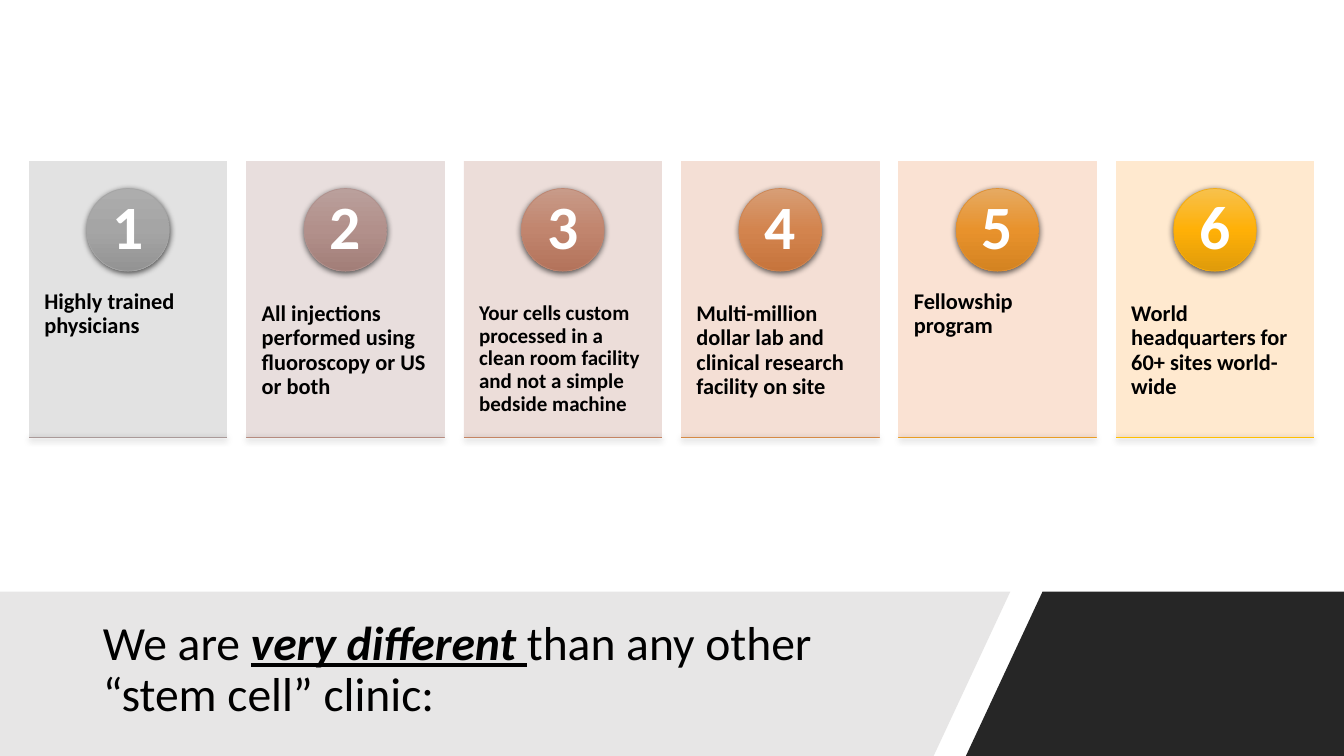
"""Build the slide of six numbered reasons why the clinic is different."""
from colorsys import hls_to_rgb

from lxml import etree
from pptx import Presentation
from pptx.dml.color import RGBColor
from pptx.enum.shapes import MSO_SHAPE
from pptx.enum.text import MSO_ANCHOR, MSO_AUTO_SIZE, PP_ALIGN
from pptx.oxml import parse_xml
from pptx.oxml.ns import nsdecls
from pptx.util import Inches, Pt

RECT, OVAL = MSO_SHAPE.RECTANGLE, MSO_SHAPE.OVAL
TOP, MIDDLE = MSO_ANCHOR.TOP, MSO_ANCHOR.MIDDLE
LEFT, CENTER = PP_ALIGN.LEFT, PP_ALIGN.CENTER
NO_FIT = MSO_AUTO_SIZE.NONE

THEME = {
    "font": "Calibri", "ink": "000000", "number": "FFFFFF",
    "band": "E7E6E6", "corner": "262626",
    "title_pt": 34, "number_pt": 44, "line_pt": 0.5,
}
REASONS = [
    ("Highly trained physicians", 16, "E2E2E2"),
    ("All injections performed using fluoroscopy or US or both", 16, "E8DEDD"),
    ("Your cells custom processed in a clean room facility and not a simple "
     "bedside machine", 15, "ECDDD9"),
    ("Multi-million dollar lab and clinical research facility on site", 16, "F4DFD5"),
    ("Fellowship program", 16, "FAE2D3"),
    ("World headquarters for 60+ sites world-wide", 16, "FFE9CF"),
]
TITLE = [("We are ", False), ("very different ", True),
         ("than any other “stem cell” clinic:", False)]

W, H = 13.33, 7.5
BAND_Y = 5.87
CARD_X, CARD_Y, CARD_W, CARD_H = 0.29, 1.6, 1.96, 2.74
PITCH = (11.07 - CARD_X) / (len(REASONS) - 1)
DISC, DISC_Y = 0.82, 1.87
NUM = 0.58
LAST_STEP = 2 * len(REASONS) - 1


def add_glossy(s, kind, box, step):
    """Add a shaded shape whose colour runs from grey to amber by step."""
    t = step / LAST_STEP
    shades = [(0, 0.68 - 0.05 * t, t), (50, 0.647 - 0.147 * t, min(1, 1.1 * t)),
              (100, 0.576 - 0.13 * t, t)]
    stops = ""
    for pos, light, sat in shades:
        rgb = RGBColor(*(round(255 * v) for v in hls_to_rgb(t / 8, light, sat)))
        stops += f'<a:gs pos="{pos * 1000}"><a:srgbClr val="{rgb}"/></a:gs>'
    sp = s.shapes.add_shape(kind, *map(Inches, box))
    line = hls_to_rgb(t / 8, 0.647 - 0.147 * t, t)
    sp.line.color.rgb = RGBColor(*(round(255 * v) for v in line))
    sp.line.width = Pt(THEME["line_pt"])
    ln = sp.line._ln
    ln.addprevious(parse_xml(
        f'<a:gradFill {nsdecls("a")} rotWithShape="1"><a:gsLst>{stops}</a:gsLst>'
        '<a:lin ang="5400000" scaled="0"/></a:gradFill>'))
    ln.addnext(etree.fromstring(
        f'<a:effectLst {nsdecls("a")}><a:outerShdw blurRad="57150" dist="19050" '
        'dir="5400000" algn="ctr" rotWithShape="0"><a:srgbClr val="000000">'
        '<a:alpha val="63000"/></a:srgbClr></a:outerShdw></a:effectLst>'))


def add_label(s, text, box, insets, size, color, align, anchor):
    """Add a wrapped bold text box."""
    tf = s.shapes.add_textbox(*map(Inches, box)).text_frame
    tf.word_wrap, tf.vertical_anchor = True, anchor
    tf.margin_left = tf.margin_right = Inches(insets[0])
    tf.margin_top = tf.margin_bottom = Inches(insets[1])
    tf.text = text
    p = tf.paragraphs[0]
    p.alignment, p.line_spacing = align, 0.9
    font = p.runs[0].font
    font.name, font.size, font.bold = THEME["font"], Pt(size), True
    font.color.rgb = RGBColor.from_string(color)


prs = Presentation()
prs.slide_width, prs.slide_height = Inches(W), Inches(H)
s = prs.slides.add_slide(prs.slide_layouts[5])

BANDS = [
    ("corner", [(10.34, BAND_Y), (W, BAND_Y), (W, H), (9.58, H)]),
    ("band", [(0, BAND_Y), (10.02, BAND_Y), (9.26, H), (0, H)]),
]
for color, points in BANDS:
    start, *rest = [(Inches(x), Inches(y)) for x, y in points]
    builder = s.shapes.build_freeform(*start)
    builder.add_line_segments(rest, close=True)
    sp = builder.convert_to_shape()
    sp.shadow.inherit = False
    sp.fill.solid()
    sp.fill.fore_color.rgb = RGBColor.from_string(THEME[color])
    sp.line.fill.background()

title = s.shapes.title
title.element.getparent().append(title.element)
title.left, title.top, title.width, title.height = map(Inches, (0.92, 6.05, 8.44, 1.2))
tf = title.text_frame
tf.word_wrap, tf.auto_size, tf.vertical_anchor = True, NO_FIT, MIDDLE
p = tf.paragraphs[0]
p.alignment, p.line_spacing = LEFT, 0.9
for text, strong in TITLE:
    r = p.add_run()
    r.text = text
    r.font.name, r.font.size = THEME["font"], Pt(THEME["title_pt"])
    r.font.bold = r.font.italic = r.font.underline = strong
    r.font.color.rgb = RGBColor.from_string(THEME["ink"])

for i, (text, size, tint) in enumerate(REASONS):
    x = CARD_X + i * PITCH
    mid = x + CARD_W / 2
    sp = s.shapes.add_shape(RECT, *map(Inches, (x, CARD_Y, CARD_W, CARD_H)))
    sp.shadow.inherit = False
    sp.fill.solid()
    sp.fill.fore_color.rgb = sp.line.color.rgb = RGBColor.from_string(tint)
    sp.line.width = Pt(THEME["line_pt"])
    add_label(s, text, (x, 2.64, CARD_W, 1.65), (0.15, 0.36), size,
              THEME["ink"], LEFT, TOP)
    add_glossy(s, OVAL, (mid - DISC / 2, DISC_Y, DISC, DISC), 2 * i)
    add_label(s, str(i + 1), (mid - NUM / 2, DISC_Y + (DISC - NUM) / 2, NUM, NUM),
              (0.06, 0.01), THEME["number_pt"], THEME["number"], CENTER, MIDDLE)
    add_glossy(s, RECT, (x, CARD_Y + CARD_H, CARD_W, 0), 2 * i + 1)

prs.save("out.pptx")
